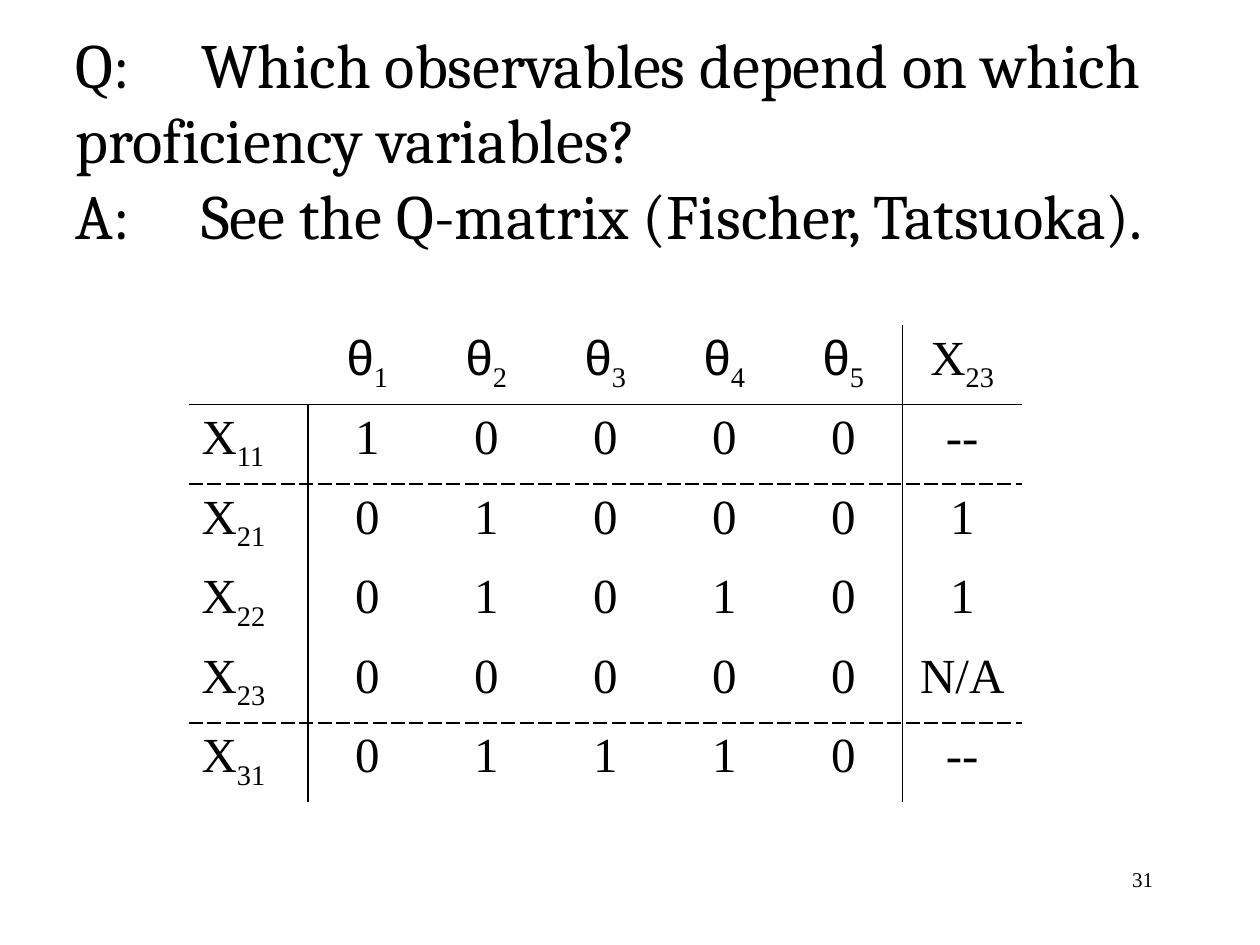
from lxml import etree
from pptx import Presentation
from pptx import util as u
from pptx.dml.color import RGBColor
from pptx.enum import text
from pptx.oxml import ns

BLACK = RGBColor(0, 0, 0)
LEFT, MID, RIGHT = text.PP_ALIGN.LEFT, text.PP_ALIGN.CENTER, text.PP_ALIGN.RIGHT
SERIF, SANS = "Times New Roman", "Arial"

HEAD = ["", "θ_1", "θ_2", "θ_3", "θ_4", "θ_5", "X_23"]
ROWS = [
    HEAD,
    ["X_11", "1", "0", "0", "0", "0", "--"],
    ["X_21", "0", "1", "0", "0", "0", "1"],
    ["X_22", "0", "1", "0", "1", "0", "1"],
    ["X_23", "0", "0", "0", "0", "0", "N/A"],
    ["X_31", "0", "1", "1", "1", "0", "--"],
]
RULES = {1: "solid", 2: "dash", 5: "dash"}


def write(frame, words, size=28, font=SERIF, align=LEFT):
    para = frame.paragraphs[0]
    para.alignment = align
    for num, line in enumerate(words.split("\n")):
        if num:
            para.add_line_break()
        for low, part in enumerate(line.split("_")):
            run = para.add_run()
            run.text = part
            run.font.size = u.Pt(size)
            run.font.name = SANS if part == "θ" else font
            run.font.color.rgb = BLACK
            if low:
                run.font._element.set("baseline", "-25000")


def edge(cell, sides):
    props = cell._tc.get_or_add_tcPr()
    for spot, side in enumerate("LRTB"):
        line = etree.Element(ns.qn("a:ln" + side), w=str(u.Pt(1)))
        dash = sides.get(side)
        if dash:
            fill = etree.SubElement(line, ns.qn("a:solidFill"))
            etree.SubElement(fill, ns.qn("a:srgbClr"), val=str(BLACK))
            etree.SubElement(line, ns.qn("a:prstDash"), val=dash)
        else:
            etree.SubElement(line, ns.qn("a:noFill"))
        props.insert(spot, line)


def stem(row, col):
    return "solid" if col == 6 or (col == 1 and row) else None


class Deck:
    def __init__(self, wide, high):
        self.show = Presentation()
        self.show.slide_width = u.Inches(wide)
        self.show.slide_height = u.Inches(high)
        self.slide = self.show.slides.add_slide(self.show.slide_layouts[6])

    def label(self, box, words, foot=0.05, anchor=text.MSO_ANCHOR.TOP, **style):
        frame = self.slide.shapes.add_textbox(*map(u.Inches, box)).text_frame
        frame.word_wrap = True
        frame.vertical_anchor = anchor
        frame.margin_bottom = u.Inches(foot)
        write(frame, words, **style)

    def grid(self, box, rows):
        shape = self.slide.shapes.add_table(
            len(rows), len(rows[0]), *map(u.Inches, box))
        table = shape.table
        table.first_row = table.horz_banding = False
        for row, items in enumerate(rows):
            for col, words in enumerate(items):
                cell = table.cell(row, col)
                cell.fill.background()
                edge(cell, {"L": stem(row, col), "R": stem(row, col + 1),
                            "T": RULES.get(row), "B": RULES.get(row + 1)})
                write(cell.text_frame, words, align=MID if col else LEFT)


def main():
    deck = Deck(10, 7.5)
    deck.label(
        (0.5, 0.3, 9.33, 2.2),
        "Q: \tWhich observables depend on which proficiency variables?\n"
        "A: \tSee the Q-matrix (Fischer, Tatsuoka).",
        foot=0.65, anchor=text.MSO_ANCHOR.MIDDLE, size=36, font="Cambria")
    deck.grid((1.5, 2.58, 6.61, 3.75), ROWS)
    deck.label((7.17, 6.83, 2.08, 0.5), "31", size=12, align=RIGHT)
    deck.show.save("out.pptx")


if __name__ == "__main__":
    main()
